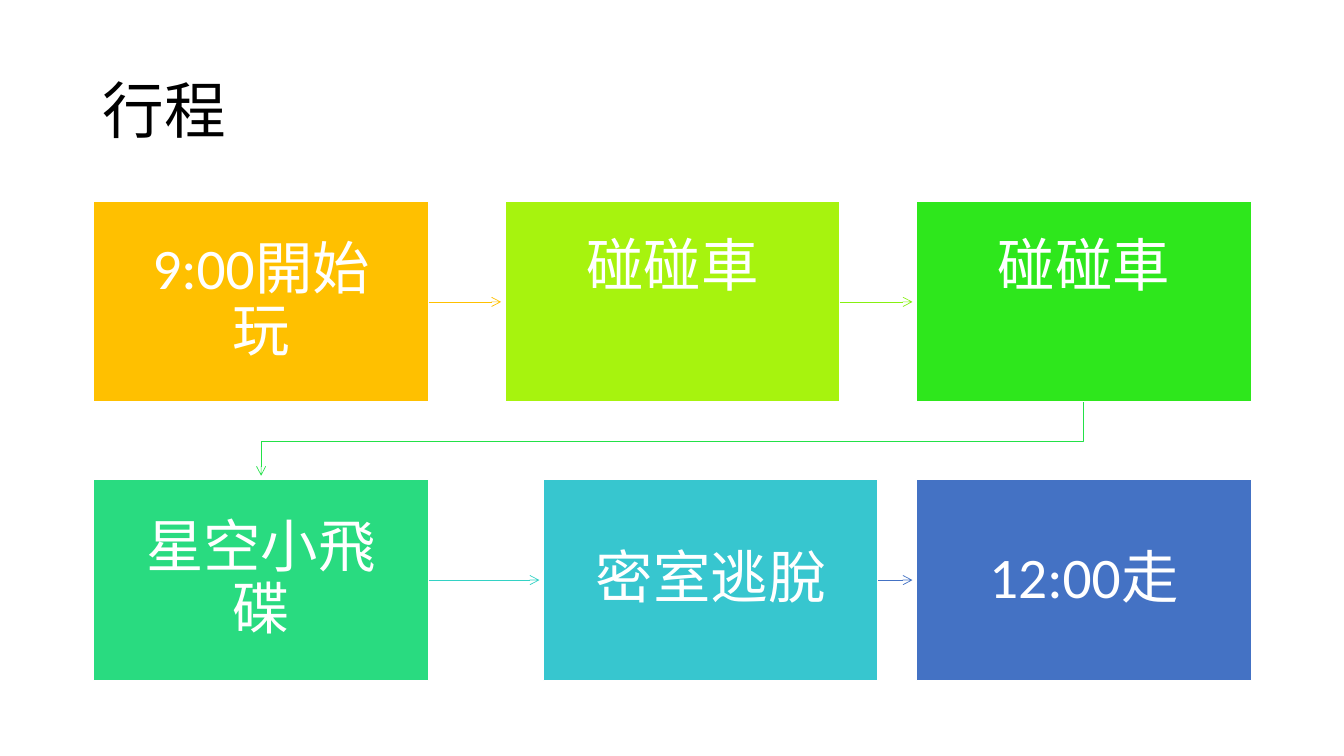
"""Builds the itinerary slide: six stops in two rows joined by arrows."""
from lxml import etree
from pptx import Presentation
from pptx.dml.color import RGBColor
from pptx.enum import shapes, text
from pptx.oxml.ns import qn
from pptx.util import Inches, Pt

TITLE = "行程"
FONT = "Calibri"
COLORS = {
    "black": "000000", "white": "FFFFFF", "amber": "FFC000",
    "lime": "A7F30E", "leaf": "86F011", "green": "2EE71C",
    "grass": "23E148", "mint": "29DB80", "aqua": "33D2C5",
    "teal": "37C6CF", "blue": "4472C4",
}
ROWS = [
    [("9:00開始玩", 0.93, "amber", "amber"),
     ("碰碰車\v", 5.01, "lime", "leaf"),
     ("碰碰車\v", 9.09, "green", "grass")],
    [("星空小飛碟", 0.93, "mint", "aqua"),
     ("密室逃脫", 5.39, "teal", "blue"),
     ("12:00走", 9.09, "blue", None)],
]
TOP, PITCH, BOX_W, BOX_H = 2, 2.76, 3.32, 1.99
INSET, ARROW_GAP = 0.32, 0.04


def rgb(name):
    return RGBColor.from_string(COLORS[name])


def style_text(tf, size, color, align):
    tf.word_wrap = True
    tf.vertical_anchor = text.MSO_ANCHOR.MIDDLE
    p = tf.paragraphs[0]
    p.alignment = align
    p.line_spacing = 0.9
    p.font.name, p.font.size = FONT, Pt(size)
    p.font.color.rgb = rgb(color)


def add_box(s, label, left, top, fill):
    sp = s.shapes.add_shape(shapes.MSO_SHAPE.RECTANGLE, Inches(left), Inches(top),
                            Inches(BOX_W), Inches(BOX_H))
    sp.shadow.inherit = False
    sp.fill.solid()
    sp.fill.fore_color.rgb = rgb(fill)
    sp.line.color.rgb = rgb("white")
    sp.line.width = Pt(1)
    tf = sp.text_frame
    tf.margin_left = tf.margin_right = tf.margin_top = tf.margin_bottom = Inches(INSET)
    tf.text = label
    style_text(tf, 41, "white", text.PP_ALIGN.CENTER)
    return sp


def style_arrow(sp, color):
    sp.line.color.rgb = rgb(color)
    sp.line.width = Pt(0.5)
    etree.SubElement(sp.line._get_or_add_ln(), qn("a:tailEnd"), type="arrow")


def add_arrow(s, start, end, color):
    y = start.top + start.height // 2
    cx = s.shapes.add_connector(shapes.MSO_CONNECTOR.STRAIGHT, start.left + start.width, y,
                                end.left - Inches(ARROW_GAP), y)
    cx.begin_connect(start, 3)
    style_arrow(cx, color)
    etree.SubElement(cx._element.spPr, qn("a:effectLst"))


def add_return_arrow(s, start, end, color):
    x1, x2 = (sp.left + sp.width // 2 for sp in (start, end))
    y1, y2 = start.top + start.height, end.top - Inches(ARROW_GAP)
    mid = (y1 + end.top) // 2
    fb = s.shapes.build_freeform(x1, y1)
    fb.add_line_segments([(x1, mid), (x2, mid), (x2, y2)], close=False)
    sp = fb.convert_to_shape()
    sp.shadow.inherit = False
    sp.fill.background()
    style_arrow(sp, color)


def main():
    prs = Presentation()
    prs.slide_width, prs.slide_height = Inches(13.33), Inches(7.5)
    s = prs.slides.add_slide(prs.slide_layouts[5])
    title = s.shapes.title
    title.left, title.top = Inches(0.92), Inches(0.4)
    title.width, title.height = Inches(11.5), Inches(1.45)
    title.text_frame.text = TITLE
    style_text(title.text_frame, 44, "black", text.PP_ALIGN.LEFT)

    stops = [(add_box(s, label, left, TOP + i * PITCH, fill), arrow)
             for i, row in enumerate(ROWS) for label, left, fill, arrow in row]
    for (start, color), (end, _) in zip(stops, stops[1:]):
        join = add_arrow if start.top == end.top else add_return_arrow
        join(s, start, end, color)
    prs.save("out.pptx")


if __name__ == "__main__":
    main()
